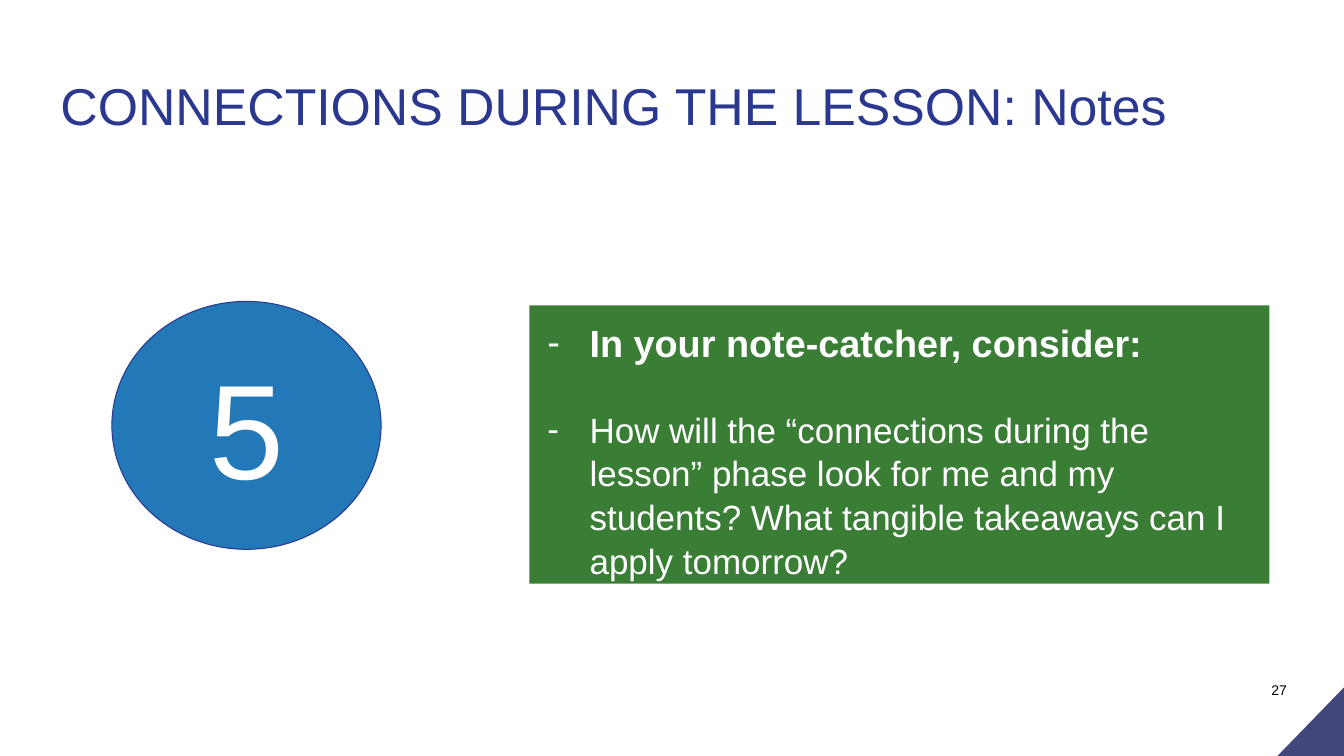
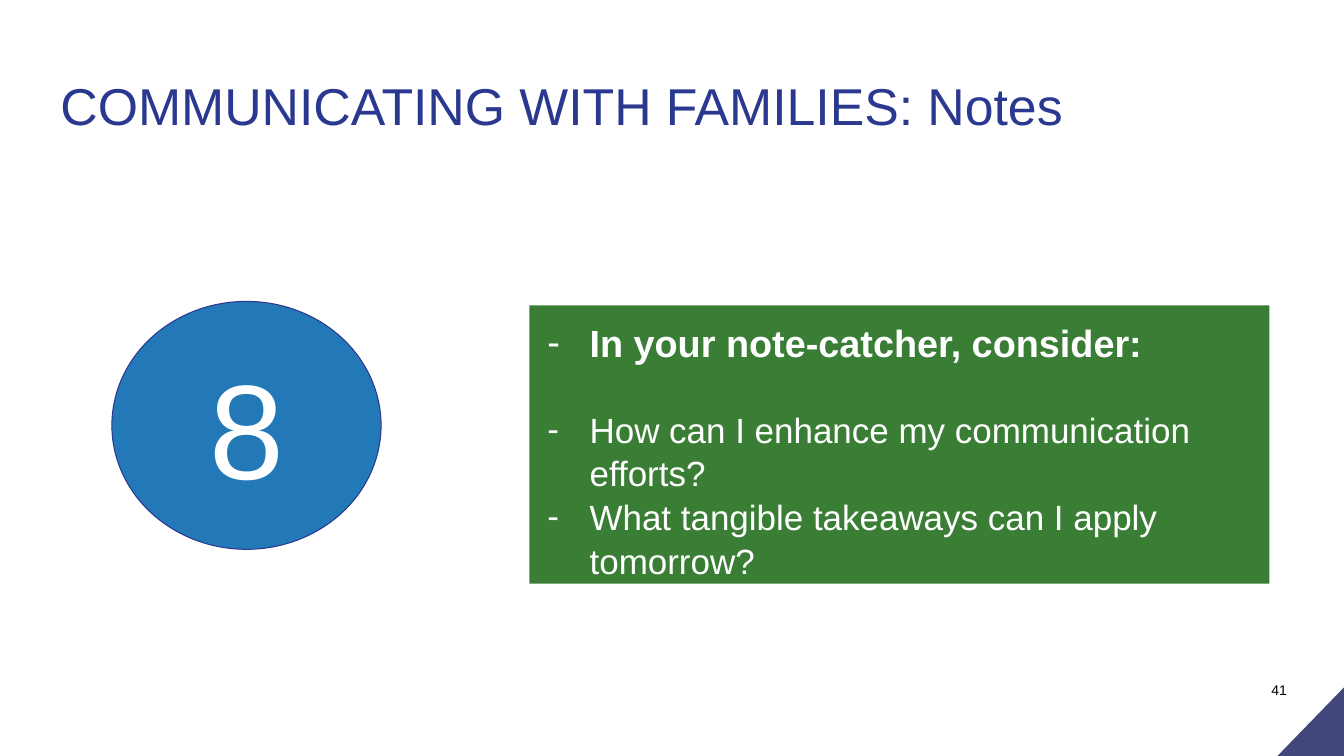
"""Build two note-taking slides with a numbered circle and a prompt panel."""
from lxml.etree import SubElement
from pptx import Presentation
from pptx.dml.color import RGBColor
from pptx.enum.shapes import MSO_SHAPE
from pptx.enum.text import MSO_ANCHOR, MSO_AUTO_SIZE, PP_ALIGN
from pptx.oxml.ns import qn
from pptx.util import Inches, Pt

PAGES = [
    {
        "title": "CONNECTIONS DURING THE LESSON: Notes",
        "number": "5",
        "page_number": "27",
        "questions": [
            "How will the “connections during the lesson” phase look for me and my "
            "students? What tangible takeaways can I apply tomorrow?",
        ],
    },
    {
        "title": "COMMUNICATING WITH FAMILIES: Notes",
        "number": "8",
        "page_number": "41",
        "questions": [
            "How can I enhance my communication efforts?",
            "What tangible takeaways can I apply tomorrow?",
        ],
    },
]
PROMPT = "In your note-catcher, consider:"

FONT = "Arial"
NAVY, BLUE, GREEN, CORNER = "2B3890", "2379B8", "3A7E36", "43467B"
WHITE, BLACK = "FFFFFF", "000000"
WIDTH, HEIGHT = 13.33, 7.5
CORNER_LEFT, CORNER_TOP = 12.67, 6.82


def color(value):
    return RGBColor.from_string(value)


def style(paragraph, size, ink, bold=False):
    for span in paragraph.runs:
        span.font.name = FONT
        span.font.size = Pt(size)
        span.font.bold = bold
        span.font.color.rgb = color(ink)


def set_margins(frame, horizontal, vertical):
    frame.margin_left = frame.margin_right = Inches(horizontal)
    frame.margin_top = frame.margin_bottom = Inches(vertical)
    frame.word_wrap = True


def add_filled(page, kind, place, fill, outline=None):
    shape = page.shapes.add_shape(kind, *map(Inches, place))
    shape.shadow.inherit = False
    shape.fill.solid()
    shape.fill.fore_color.rgb = color(fill)
    if outline:
        shape.line.color.rgb = color(outline)
        shape.line.width = Pt(0.75)
    else:
        shape.line.fill.background()
    return shape


def add_dash(paragraph):
    properties = paragraph._p.get_or_add_pPr()
    properties.set("marL", str(Inches(0.5)))
    properties.set("indent", str(Inches(-0.42)))
    bullet_color = SubElement(properties, qn("a:buClr"))
    SubElement(bullet_color, qn("a:srgbClr"), val=WHITE)
    SubElement(properties, qn("a:buFont"), typeface=FONT)
    SubElement(properties, qn("a:buChar"), char="-")


def add_frame(page, title, page_number):
    corner = add_filled(
        page,
        MSO_SHAPE.RIGHT_TRIANGLE,
        (CORNER_LEFT, CORNER_TOP, WIDTH - CORNER_LEFT, HEIGHT - CORNER_TOP),
        CORNER,
    )
    corner._element.spPr.xfrm.set("flipH", "1")

    heading = page.shapes.title
    heading.left, heading.top = Inches(0), Inches(0.58)
    heading.width, heading.height = Inches(WIDTH), Inches(1)
    frame = heading.text_frame
    frame.text = title
    set_margins(frame, 0.6, 0)
    frame.auto_size = MSO_AUTO_SIZE.NONE
    frame.vertical_anchor = MSO_ANCHOR.MIDDLE
    frame.paragraphs[0].alignment = PP_ALIGN.LEFT
    frame.paragraphs[0].line_spacing = 0.9
    style(frame.paragraphs[0], 37, NAVY)

    box = page.shapes.add_textbox(*map(Inches, (12.61, 6.76, 0.67, 0.68)))
    box.text_frame.text = page_number
    set_margins(box.text_frame, 0, 0)
    style(box.text_frame.paragraphs[0], 10, BLACK)


def add_circle(page, number):
    circle = add_filled(page, MSO_SHAPE.OVAL, (1.11, 2.99, 2.67, 2.46), BLUE, NAVY)
    frame = circle.text_frame
    frame.text = number
    set_margins(frame, 0.1, 0.1)
    frame.vertical_anchor = MSO_ANCHOR.MIDDLE
    frame.paragraphs[0].alignment = PP_ALIGN.CENTER
    style(frame.paragraphs[0], 96, WHITE)


def add_panel(page, questions):
    panel = add_filled(page, MSO_SHAPE.RECTANGLE, (5.25, 3.03, 7.34, 2.76), GREEN)
    frame = panel.text_frame
    frame.text = "\n".join([PROMPT, *questions])
    set_margins(frame, 0.1, 0.12)
    frame.vertical_anchor = MSO_ANCHOR.TOP
    for index, paragraph in enumerate(frame.paragraphs):
        add_dash(paragraph)
        paragraph.alignment = PP_ALIGN.LEFT
        paragraph.line_spacing = 1.04
        is_prompt = index == 0
        style(paragraph, 27 if is_prompt else 25, WHITE, bold=is_prompt)
    frame.paragraphs[1].space_before = Pt(30)


def main():
    deck = Presentation()
    deck.slide_width, deck.slide_height = Inches(WIDTH), Inches(HEIGHT)
    for content in PAGES:
        page = deck.slides.add_slide(deck.slide_layouts[5])
        add_frame(page, content["title"], content["page_number"])
        add_circle(page, content["number"])
        add_panel(page, content["questions"])
    deck.save("out.pptx")


if __name__ == "__main__":
    main()
